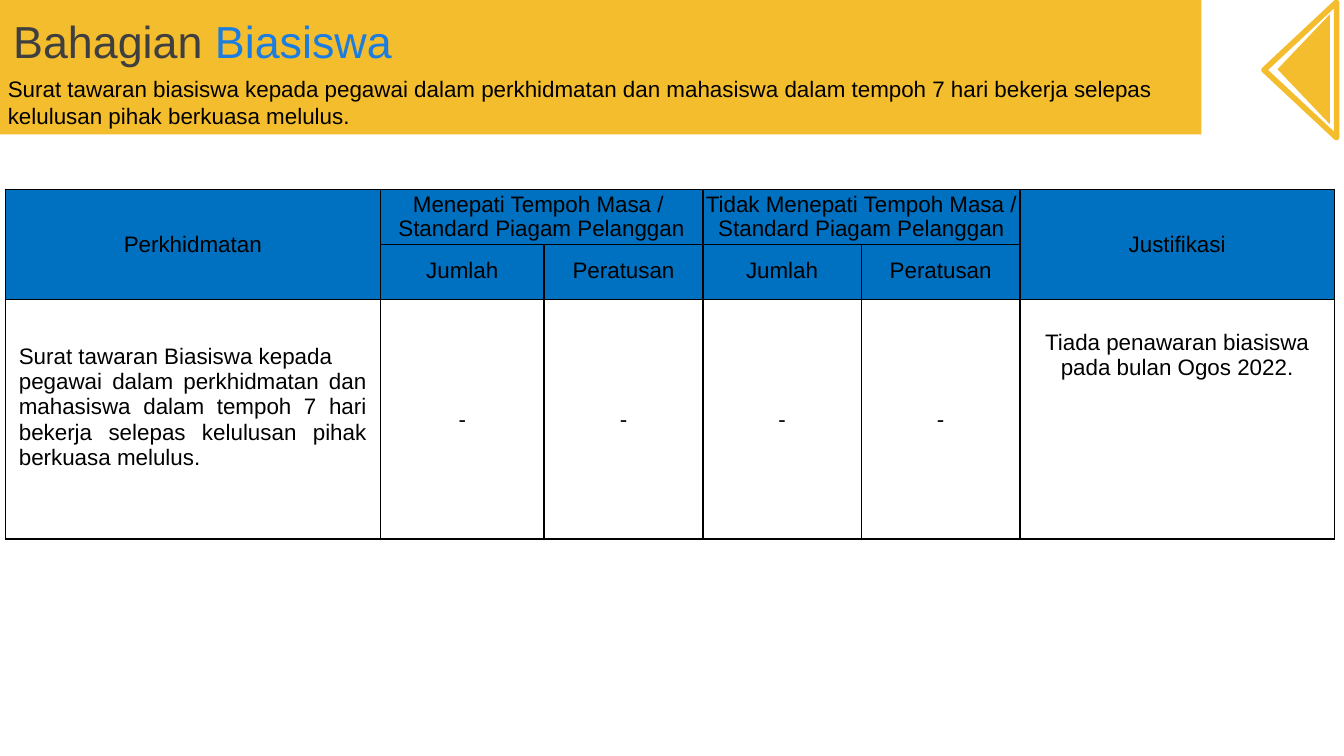
from dataclasses import dataclass

from lxml import etree
from pptx import Presentation
from pptx.dml.color import RGBColor
from pptx.enum.shapes import MSO_SHAPE as SHAPE
from pptx.enum.text import MSO_ANCHOR as ANCHOR, PP_ALIGN as ALIGN
from pptx.oxml.ns import qn
from pptx.util import Inches, Pt

FONT = "Arial"
YELLOW, BLUE, BLACK = "F4BD2D", "0070C0", "000000"
WIDE = (0.1, 0.05, 0.1, 0.05)
BODY = (0.07, 0.05, 0.07, 0.05)
NONE = (0, 0, 0, 0)


@dataclass
class Cell:
    row: int
    col: int
    lines: list[str]
    rows: int = 1
    cols: int = 1
    margins: tuple = NONE
    align: ALIGN = ALIGN.CENTER
    anchor: ANCHOR = ANCHOR.MIDDLE
    spacing: float = 1.0


def rgb(value: str) -> RGBColor:
    return RGBColor.from_string(value)


def add_run(p, text: str, size: float = 12, color: str = BLACK) -> None:
    r = p.add_run()
    r.text = text
    r.font.name, r.font.size = FONT, Pt(size)
    r.font.color.rgb = rgb(color)


def write_lines(tf, lines: list[str], align: ALIGN, spacing: float = 1.0) -> None:
    for i, line in enumerate(lines):
        p = tf.paragraphs[0] if i == 0 else tf.add_paragraph()
        p.alignment, p.line_spacing = align, spacing
        add_run(p, line)


def add_shape(s, kind: SHAPE, box: tuple, fill: str = "", line: str = "", rotation: float = 0) -> None:
    sp = s.shapes.add_shape(kind, *map(Inches, box))
    sp.shadow.inherit = False
    sp.rotation = rotation
    if fill:
        sp.fill.solid()
        sp.fill.fore_color.rgb = rgb(fill)
    else:
        sp.fill.background()
    if line:
        sp.line.color.rgb = rgb(line)
        sp.line.width = Pt(3)
    else:
        sp.line.fill.background()


def add_text_box(s, box: tuple, anchor: ANCHOR = ANCHOR.TOP):
    tf = s.shapes.add_textbox(*map(Inches, box)).text_frame
    tf.word_wrap = True
    tf.vertical_anchor = anchor
    return tf


def style_cell(cell, fill: str) -> None:
    """Draw black borders on all four sides, then set the fill."""
    tc_pr = cell._tc.get_or_add_tcPr()
    for side in ("a:lnL", "a:lnR", "a:lnT", "a:lnB"):
        ln = etree.SubElement(tc_pr, qn(side), w=str(Pt(1)))
        solid = etree.SubElement(ln, qn("a:solidFill"))
        etree.SubElement(solid, qn("a:srgbClr"), val=BLACK)
    if fill:
        cell.fill.solid()
        cell.fill.fore_color.rgb = rgb(fill)
    else:
        cell.fill.background()


def fill_cell(table, item: Cell) -> None:
    cell = table.cell(item.row, item.col)
    if item.rows * item.cols > 1:
        cell.merge(table.cell(item.row + item.rows - 1, item.col + item.cols - 1))
    cell.margin_left, cell.margin_top, cell.margin_right, cell.margin_bottom = map(Inches, item.margins)
    cell.vertical_anchor = item.anchor
    write_lines(cell.text_frame, item.lines, item.align, item.spacing)


def add_service_table(s, cells: list[Cell]) -> None:
    widths = [2.79, 1.22, 1.18, 1.18, 1.18, 2.34]
    heights = [0.41, 0.41, 1.78]
    table = s.shapes.add_table(len(heights), len(widths), Inches(0.04), Inches(1.41),
                               Inches(sum(widths)), Inches(sum(heights))).table
    table.first_row = table.horz_banding = False
    for column, width in zip(table.columns, widths):
        column.width = Inches(width)
    for i, (row, height) in enumerate(zip(table.rows, heights)):
        row.height = Inches(height)
        for cell in row.cells:
            style_cell(cell, BLUE if i < 2 else "")
    for item in cells:
        fill_cell(table, item)


def main() -> None:
    prs = Presentation()
    # Widescreen, 16:9
    prs.slide_width = Inches(10)
    prs.slide_height = prs.slide_width * 9 // 16
    s = prs.slides.add_slide(prs.slide_layouts[6])

    # Corner triangles and header band
    add_shape(s, SHAPE.ISOSCELES_TRIANGLE, (9.29, 0.32, 0.82, 0.39), fill=YELLOW, rotation=270)
    add_shape(s, SHAPE.ISOSCELES_TRIANGLE, (9.17, 0.25, 1.01, 0.54), line=YELLOW, rotation=270)
    add_shape(s, SHAPE.RECTANGLE, (0, 0, 8.94, 1), fill=YELLOW)

    # Service promise and title
    promise = add_text_box(s, (-0.04, 0.51, 8.91, 0.5))
    write_lines(promise, [
        "Surat tawaran biasiswa kepada pegawai dalam perkhidmatan dan mahasiswa "
        "dalam tempoh 7 hari bekerja selepas ",
        "kelulusan pihak berkuasa melulus.",
    ], ALIGN.JUSTIFY)
    title = add_text_box(s, (0, 0.01, 4.65, 0.59), ANCHOR.MIDDLE).paragraphs[0]
    add_run(title, "Bahagian ", 24, "3F3F3F")
    add_run(title, "Biasiswa", 24, "1C7DE1")

    # Table: two header rows, then the service
    cells = [
        Cell(0, 0, ["Perkhidmatan"], rows=2, margins=WIDE),
        Cell(0, 1, ["Menepati Tempoh Masa / ", "Standard Piagam Pelanggan"], cols=2, spacing=0.96),
        Cell(0, 3, ["Tidak Menepati Tempoh Masa / Standard Piagam Pelanggan"], cols=2, spacing=0.96),
        Cell(0, 5, ["Justifikasi"], rows=2),
        # A no-break space keeps "dan mahasiswa" on one line
        Cell(2, 0, [
            "Surat tawaran Biasiswa kepada ",
            "pegawai dalam perkhidmatan dan mahasiswa dalam tempoh 7 hari bekerja "
            "selepas kelulusan pihak berkuasa melulus.",
        ], margins=(0.1, 0.05, 0.1, 0.23), align=ALIGN.JUSTIFY),
        Cell(2, 5, ["Tiada penawaran biasiswa", "pada bulan Ogos 2022."],
             margins=(0.07, 0.23, 0.07, 0.05), anchor=ANCHOR.TOP),
    ]
    for col, heading in enumerate(["Jumlah", "Peratusan"] * 2, start=1):
        cells.append(Cell(1, col, [heading], spacing=0.88))
        cells.append(Cell(2, col, ["-"], margins=BODY))
    add_service_table(s, cells)

    prs.save("out.pptx")


if __name__ == "__main__":
    main()
